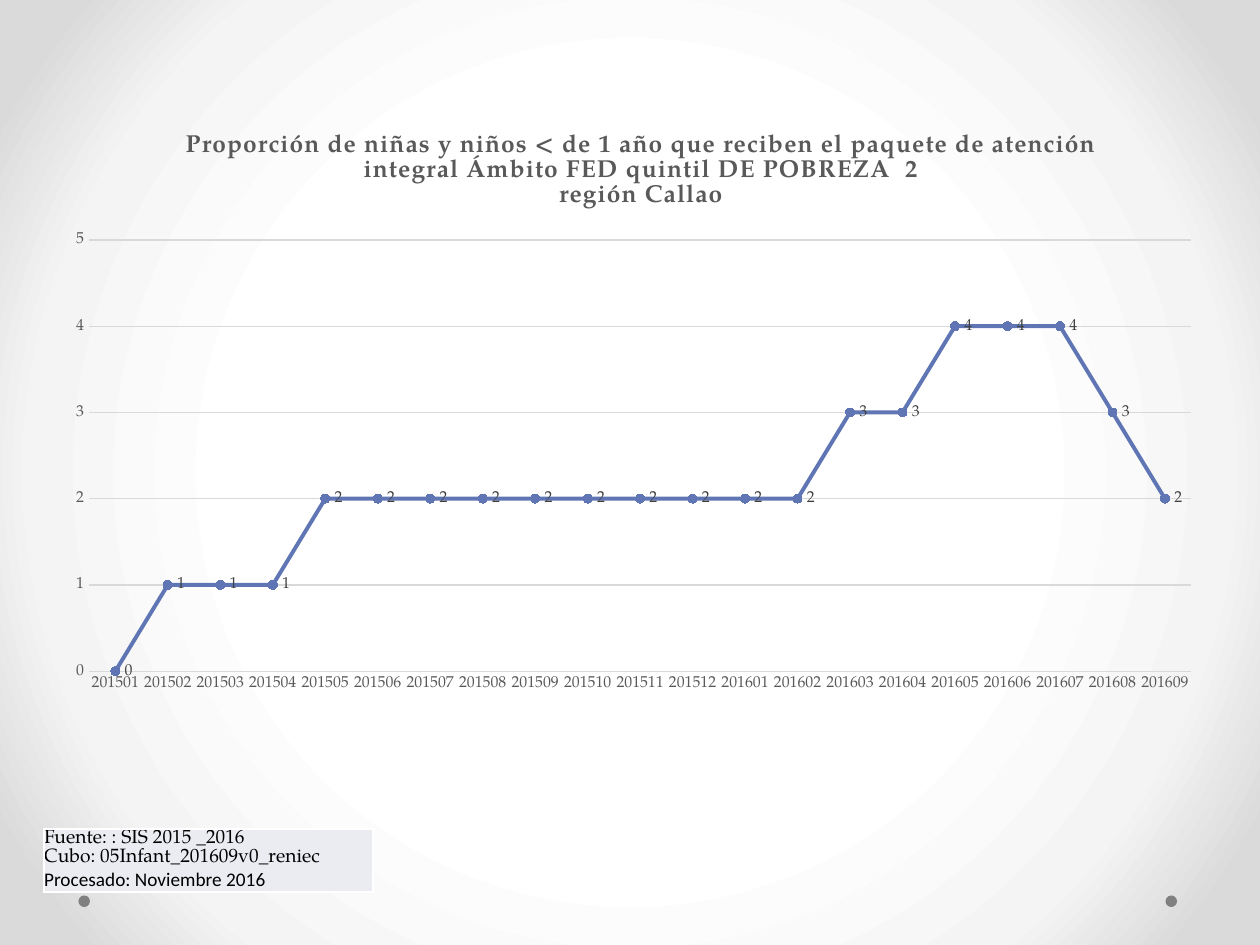
"""Build a slide with a line chart of child care coverage and its source note."""
from dataclasses import dataclass
from lxml import etree
from pptx import Presentation
from pptx.chart.data import CategoryChartData
from pptx.dml.color import RGBColor
from pptx.enum.chart import XL_CHART_TYPE, XL_LABEL_POSITION, XL_MARKER_STYLE, XL_TICK_MARK
from pptx.enum.shapes import MSO_SHAPE
from pptx.enum.text import MSO_ANCHOR
from pptx.oxml import parse_xml
from pptx.oxml.ns import nsdecls, qn
from pptx.util import Pt

LINE = XL_CHART_TYPE.LINE_MARKERS
RIGHT = XL_LABEL_POSITION.RIGHT
ROUND = XL_MARKER_STYLE.CIRCLE
NONE = XL_TICK_MARK.NONE
OVAL = MSO_SHAPE.OVAL
BOTTOM = MSO_ANCHOR.BOTTOM


@dataclass(frozen=True)
class Theme:
    serif: str = "TeX Gyre Pagella"
    sans: str = "Calibri"
    black: RGBColor = RGBColor.from_string("000000")
    blue: RGBColor = RGBColor.from_string("6076B4")
    gray: RGBColor = RGBColor.from_string("595959")
    dark: RGBColor = RGBColor.from_string("404040")
    rule: RGBColor = RGBColor.from_string("D9D9D9")
    dot: RGBColor = RGBColor.from_string("808080")
    pale: RGBColor = RGBColor.from_string("EAECF2")
    head: int = 14
    note: int = 11
    base: int = 10
    tick: int = 9


theme = Theme()


def write(text, para=None, font=None, face=theme.serif, size=theme.tick,
          color=theme.gray, bold=False, gap=0):
    if para is not None:
        run = para.add_run()
        run.text = text
        font = run.font
        if gap:
            run._r.get_or_add_rPr().set("spc", str(gap))
    font.name, font.size, font.bold = face, Pt(size), bold
    font.color.rgb = color


def place(node, inner=False, **spots):
    old = node.find(qn("c:layout"))
    if old is not None:
        node.remove(old)
    new = parse_xml(f"<c:layout {nsdecls('c')}><c:manualLayout/></c:layout>")
    if inner:
        etree.SubElement(new[0], qn("c:layoutTarget")).set("val", "inner")
    for key in "xy":
        etree.SubElement(new[0], qn(f"c:{key}Mode")).set("val", "edge")
    for key, val in spots.items():
        etree.SubElement(new[0], qn(f"c:{key}")).set("val", str(val))
    node.insert(0 if inner else 1, new)


deck = Presentation()
deck.slide_width, deck.slide_height = Pt(720), Pt(540)
slide = deck.slides.add_slide(deck.slide_layouts[6])

slide.background.fill.gradient()
grad = slide._element.find(".//" + qn("a:gradFill"))
for part in list(grad):
    grad.remove(part)
stops = etree.SubElement(grad, qn("a:gsLst"))
for pos, tone in ((50, "FFFFFF"), (76, "F4F4F4"), (92, "DADADA")):
    stop = etree.SubElement(stops, qn("a:gs"), pos=str(pos * 1000))
    etree.SubElement(stop, qn("a:srgbClr"), val=tone)
path = etree.SubElement(grad, qn("a:path"), path="circle")
etree.SubElement(path, qn("a:fillToRect"), l="50000", t="50000", r="50000", b="50000")

for left in (666, 44.8):
    dot = slide.shapes.add_shape(OVAL, Pt(left), Pt(511.7), Pt(6.6), Pt(6.6))
    dot.shadow.inherit = False
    dot.fill.solid()
    dot.fill.fore_color.rgb = theme.dot
    dot.line.fill.background()

table = slide.shapes.add_table(1, 1, Pt(25.2), Pt(473.8), Pt(188), Pt(36)).table
cell = table.cell(0, 0)
cell.fill.solid()
cell.fill.fore_color.rgb = theme.pale
cell.vertical_anchor = BOTTOM
cell.margin_left = cell.margin_right = cell.margin_top = cell.margin_bottom = 0
props = cell._tc.get_or_add_tcPr()
for spot, side in enumerate("LRTB"):
    props.insert(spot, parse_xml(
        f'<a:ln{side} {nsdecls("a")} w="12700"><a:solidFill>'
        f'<a:srgbClr val="FFFFFF"/></a:solidFill></a:ln{side}>'))
notes = (("Fuente: : SIS 2015 _2016", theme.serif),
         ("Cubo: 05Infant_201609v0_reniec", theme.serif),
         ("Procesado: Noviembre 2016", theme.sans))
frame = cell.text_frame
for row, (text, face) in enumerate(notes):
    para = frame.add_paragraph() if row else frame.paragraphs[0]
    write(text, para, face=face, size=theme.note, color=theme.black)

data = CategoryChartData(number_format="0")
data.categories = [f"{year}{month:02}" for year, last in ((2015, 12), (2016, 9))
                   for month in range(1, last + 1)]
data.add_series("Series 1", [0] + [1] * 3 + [2] * 10 + [3] * 2 + [4] * 3 + [3, 2])
chart = slide.shapes.add_chart(LINE, Pt(31), Pt(66.2), Pt(663), Pt(337.7), data).chart
write("", font=chart.font, size=theme.base, color=theme.black)
chart.has_legend = False

title = chart.chart_title
lines = ("Proporción de niñas y niños < de 1 año que reciben el paquete de atención",
         "integral Ámbito FED quintil DE POBREZA  2",
         "región Callao")
frame = title.text_frame
for row, text in enumerate(lines):
    para = frame.add_paragraph() if row else frame.paragraphs[0]
    write(text, para, size=theme.head, bold=True, gap=50)
title.include_in_layout = False
place(title._element, x=0.11, y=0.02)
place(chart._chartSpace.chart.plotArea, inner=True, x=0.03, y=0.21, w=0.95, h=0.73)

across, up = chart.category_axis, chart.value_axis
for axis in (across, up):
    axis.major_tick_mark = axis.minor_tick_mark = NONE
    write("", font=axis.tick_labels.font)
up.minimum_scale, up.maximum_scale, up.major_unit = 0, 5, 1
up.tick_labels.number_format = "0"
up.tick_labels.number_format_is_linked = False
up.format.line.fill.background()
for rule in (across.format.line, up.major_gridlines.format.line):
    rule.color.rgb = theme.rule
    rule.width = Pt(0.75)

plot = chart.plots[0]
plot.vary_by_categories = False
line = plot.series[0]
line.smooth = False
line.format.line.color.rgb = theme.blue
line.format.line.width = Pt(2.25)
mark = line.marker
mark.style, mark.size = ROUND, 5
mark.format.fill.solid()
mark.format.fill.fore_color.rgb = theme.blue
mark.format.line.color.rgb = theme.blue
tags = line.data_labels
tags.show_value = True
tags.position = RIGHT
tags.number_format = "0"
tags.number_format_is_linked = False
write("", font=tags.font, color=theme.dark)

deck.save("out.pptx")
